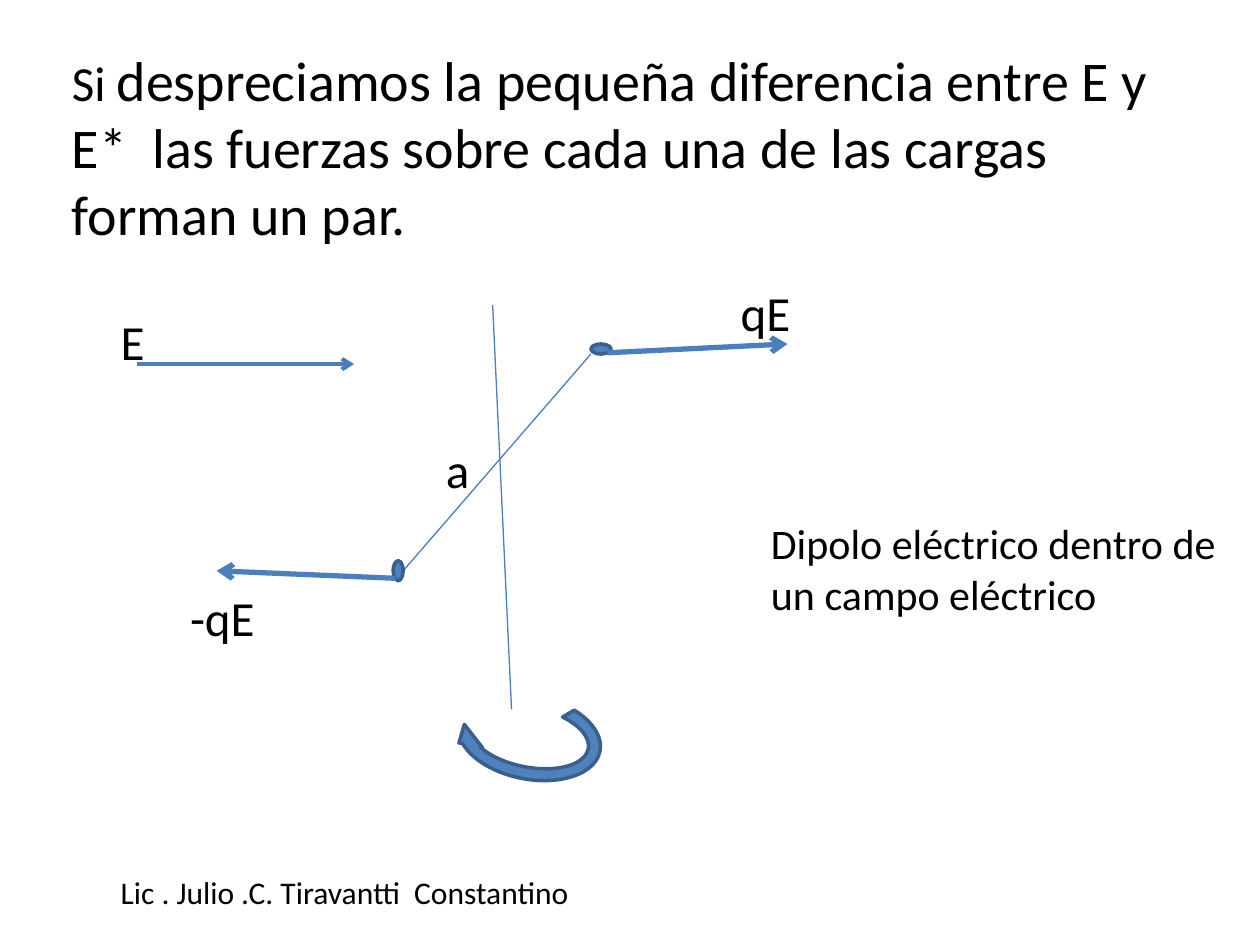
import pptx
import pptx.dml.color
import pptx.enum.shapes
import pptx.enum.text
import pptx.oxml.ns
import pptx.util
from lxml import etree

Inches = pptx.util.Inches
Pt = pptx.util.Pt
RGBColor = pptx.dml.color.RGBColor
Shapes = pptx.enum.shapes.MSO_SHAPE
qn = pptx.oxml.ns.qn

BLACK = RGBColor(0x00, 0x00, 0x00)
BLUE = RGBColor(0x4F, 0x81, 0xBD)
DARK_BLUE = RGBColor(0x3A, 0x5F, 0x8C)
LINE_BLUE = RGBColor(0x4B, 0x7E, 0xBC)

TITLE = (
    ("Si ", 28),
    ("despreciamos la pequeña diferencia entre E y E*  las fuerzas "
     "sobre cada una de las cargas forman un par.", 32),
)
LABELS = (
    ("a", 28, (3.44, 3.44, 0.86, 0.57)),
    ("qE", 28, (5.78, 2.19, 1.41, 0.57)),
    ("-qE", 28, (1.41, 4.61, 1.25, 0.57)),
    ("E", 28, (0.86, 2.42, 0.7, 0.57)),
    ("Dipolo eléctrico dentro de un campo eléctrico", 24, (6.02, 4.06, 3.98, 0.91)),
    ("Lic . Julio .C. Tiravantti  Constantino", 18, (0.86, 6.88, 8.36, 0.4)),
)
DIPOLE_AXIS = ((3.2, 4.53), (4.69, 2.81))
ROTATION_AXIS = ((3.91, 2.42), (4.06, 5.63))
CHARGES = ((4.69, 2.73, 0.16, 0.08), (3.12, 4.45, 0.08, 0.16))
FORCES = (((4.82, 2.8), (6.25, 2.73)), ((3.14, 4.59), (1.72, 4.53)))
FIELD = ((1.09, 2.89), (2.81, 2.89))


def apply_format(target, values):
    for name, value in values.items():
        setattr(target, name, value)


def place(box, area):
    names = ("left", "top", "width", "height")
    apply_format(box, dict(zip(names, map(Inches, area))))


def write_text(box, spans):
    frame = box.text_frame
    apply_format(frame, {
        "word_wrap": True,
        "auto_size": pptx.enum.text.MSO_AUTO_SIZE.NONE,
        "vertical_anchor": pptx.enum.text.MSO_ANCHOR.TOP,
    })
    para = frame.paragraphs[0]
    para.alignment = pptx.enum.text.PP_ALIGN.LEFT
    for text, size in spans:
        span = para.add_run()
        span.text = text
        apply_format(span.font, {"name": "Calibri", "size": Pt(size)})
        span.font.color.rgb = BLACK


def add_title(page, spans, area):
    title = page.shapes.title
    place(title, area)
    write_text(title, spans)


def add_label(page, text, size, area):
    box = page.shapes.add_textbox(*map(Inches, area))
    write_text(box, [(text, size)])


def add_figure(page, kind, area):
    figure = page.shapes.add_shape(kind, *map(Inches, area))
    figure.shadow.inherit = False
    figure.fill.solid()
    figure.fill.fore_color.rgb = BLUE
    figure.line.color.rgb = DARK_BLUE
    figure.line.width = Pt(2)
    return figure


def add_line(page, ends, width, arrow=False):
    start, finish = ends
    line = page.shapes.add_connector(
        pptx.enum.shapes.MSO_CONNECTOR.STRAIGHT, *map(Inches, start + finish))
    line.line.color.rgb = LINE_BLUE
    line.line.width = Pt(width)
    properties = line._element.spPr
    if arrow:
        etree.SubElement(properties.find(qn("a:ln")), qn("a:tailEnd"), type="arrow")
    etree.SubElement(properties, qn("a:effectLst"))


def add_torque(page):
    torque = add_figure(page, Shapes.CIRCULAR_ARROW, (3.58, 5.47, 1.24, 0.76))
    torque.rotation = 191.2
    torque.adjustments[3] = 82.63


def main():
    deck = pptx.Presentation()
    apply_format(deck, {"slide_width": Inches(10), "slide_height": Inches(7.5)})
    page = deck.slides.add_slide(deck.slide_layouts.get_by_name("Title Only"))
    add_title(page, TITLE, (0.47, 0.31, 8.98, 1.72))
    add_line(page, DIPOLE_AXIS, 0.75)
    for area in CHARGES:
        add_figure(page, Shapes.OVAL, area)
    for ends in FORCES:
        add_line(page, ends, 3, arrow=True)
    add_line(page, ROTATION_AXIS, 0.75)
    add_torque(page)
    add_line(page, FIELD, 2.25, arrow=True)
    for label in LABELS:
        add_label(page, *label)
    deck.save("out.pptx")


if __name__ == "__main__":
    main()
